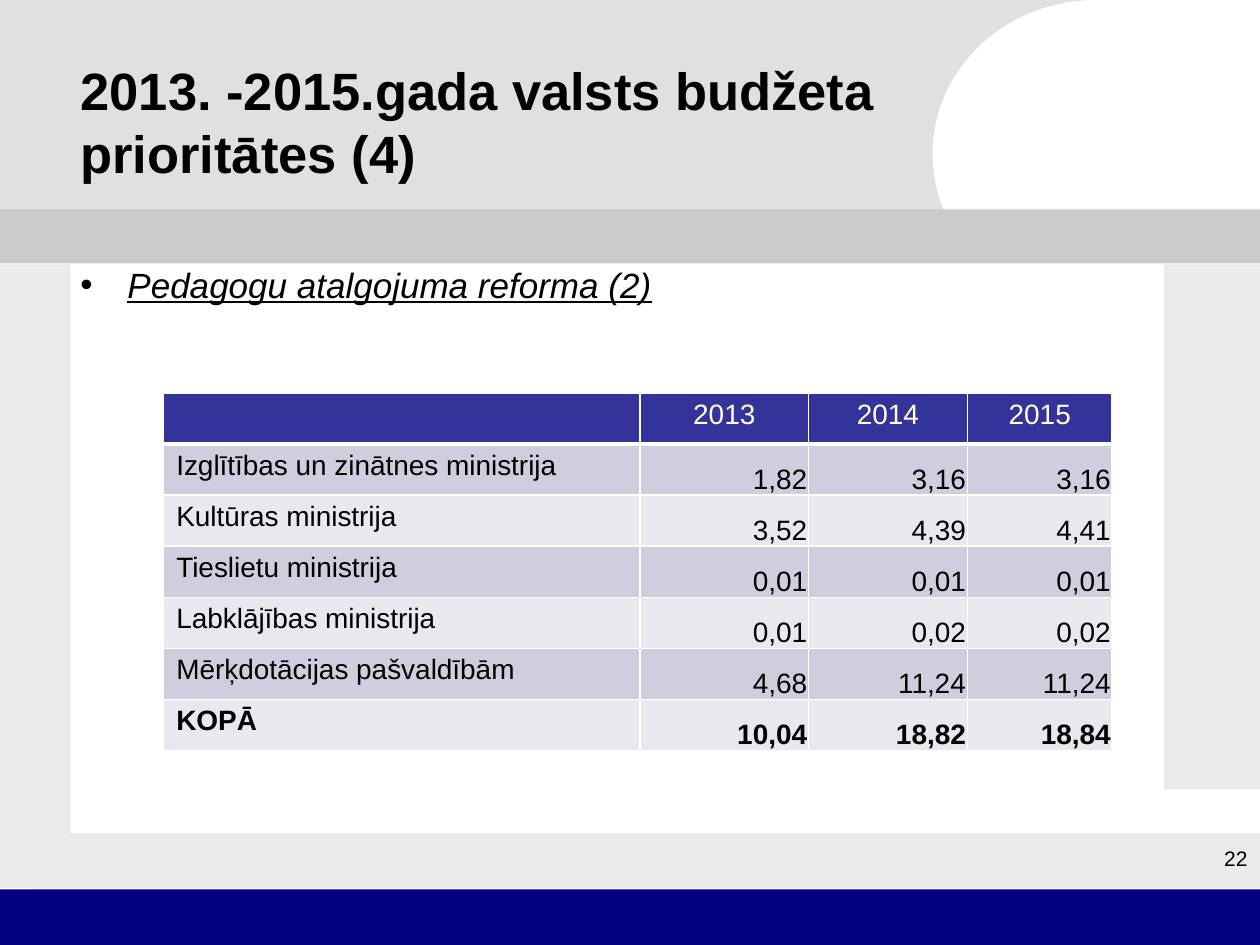
from lxml.etree import SubElement
from pptx import Presentation
from pptx.dml.color import RGBColor
from pptx.enum.shapes import MSO_SHAPE
from pptx.enum.text import MSO_ANCHOR, PP_ALIGN
from pptx.oxml.ns import qn
from pptx.util import Cm, Pt

TITLE = "2013. -2015.gada valsts budžeta prioritātes (4)"
TOPIC = "Pedagogu atalgojuma reforma (2)"
PAGE_NUMBER = "22"
FUNDING = [
    ("", "2013", "2014", "2015"),
    ("Izglītības un zinātnes ministrija", "1,82", "3,16", "3,16"),
    ("Kultūras ministrija", "3,52", "4,39", "4,41"),
    ("Tieslietu ministrija", "0,01", "0,01", "0,01"),
    ("Labklājības ministrija", "0,01", "0,02", "0,02"),
    ("Mērķdotācijas pašvaldībām", "4,68", "11,24", "11,24"),
    ("KOPĀ", "10,04", "18,82", "18,84"),
]
COLUMN_WIDTHS = [9.6, 3.4, 3.2, 2.92]
ROW_HEIGHT = 1.03
BACKDROP = [
    (MSO_SHAPE.RECTANGLE, "E0E0E0", (0, 0, 23.09, 4.29)),
    (MSO_SHAPE.OVAL, "FFFFFF", (18.8, 0, 6.6, 6.2)),
    (MSO_SHAPE.RECTANGLE, "EAEAEA", (0, 5.33, 1.42, 12.57)),
    (MSO_SHAPE.RECTANGLE, "EAEAEA", (0.66, 16.79, 24.74, 1.12)),
    (MSO_SHAPE.RECTANGLE, "000080", (0, 17.93, 25.4, 1.12)),
    (MSO_SHAPE.RECTANGLE, "EAEAEA", (23.47, 5.33, 1.93, 10.59)),
    (MSO_SHAPE.RECTANGLE, "FFFFFF", (21.89, 0, 3.51, 5.13)),
    (MSO_SHAPE.RECTANGLE, "CBCBCB", (0, 4.22, 25.4, 1.09)),
]


def paint(target, color):
    """Fill a shape or cell with one solid colour."""
    target.fill.solid()
    target.fill.fore_color.rgb = RGBColor.from_string(color)


def place(shape, at):
    """Set left, top, width and height in centimetres."""
    for name, length in zip(("left", "top", "width", "height"), at):
        setattr(shape, name, Cm(length))


def write(frame, text, size, color="000000", align=PP_ALIGN.LEFT, **formats):
    """Write one formatted paragraph and return it."""
    para = frame.paragraphs[0]
    para.alignment = align
    span = para.add_run()
    span.text = text
    span.font.color.rgb = RGBColor.from_string(color)
    for name, value in {"name": "Arial", "size": Pt(size), **formats}.items():
        setattr(span.font, name, value)
    return para


def add_text(page, at, text, size, **formats):
    """Add a wrapping text box holding one paragraph."""
    box = page.shapes.add_textbox(*map(Cm, at))
    box.text_frame.word_wrap = True
    return write(box.text_frame, text, size, **formats)


def add_bullet(para, indent):
    """Give a paragraph a hanging round bullet."""
    properties = para._p.get_or_add_pPr()
    properties.set("marL", str(Cm(indent)))
    properties.set("indent", str(-Cm(indent)))
    SubElement(properties, qn("a:buFont"), typeface="Arial")
    SubElement(properties, qn("a:buChar"), char="•")


def add_borders(cell, **widths):
    """Draw white cell borders of the given widths in points."""
    properties = cell._tc.get_or_add_tcPr()
    for side in ("L", "R", "T", "B"):
        line = SubElement(properties, qn(f"a:ln{side}"), w=str(Pt(widths.get(side, 1))))
        fill = SubElement(line, qn("a:solidFill"))
        SubElement(fill, qn("a:srgbClr"), val="FFFFFF")


def add_backdrop(page):
    """Draw the plain panels behind the content."""
    for kind, color, at in BACKDROP:
        panel = page.shapes.add_shape(kind, *map(Cm, at))
        panel.shadow.inherit = False
        panel.line.fill.background()
        paint(panel, color)


def add_funding_table(page):
    """Add the table of funding by ministry and year."""
    size = len(FUNDING), len(COLUMN_WIDTHS)
    at = 3.3, 7.92, sum(COLUMN_WIDTHS), ROW_HEIGHT * len(FUNDING)
    table = page.shapes.add_table(*size, *map(Cm, at)).table
    for column, width in zip(table.columns, COLUMN_WIDTHS):
        column.width = Cm(width)
    for i, values in enumerate(FUNDING):
        table.rows[i].height = Cm(ROW_HEIGHT)
        for j, value in enumerate(values):
            cell = table.cell(i, j)
            color, align = "000000", PP_ALIGN.LEFT
            if i == 0:
                color, align = "FFFFFF", PP_ALIGN.CENTER
                add_borders(cell, B=3)
                paint(cell, "333399")
            else:
                add_borders(cell, T=3 if i == 1 else 1)
                paint(cell, "CECEDE" if i % 2 else "E8E8EF")
                if j:
                    align = PP_ALIGN.RIGHT
                    cell.vertical_anchor = MSO_ANCHOR.BOTTOM
                    cell.margin_left = cell.margin_right = cell.margin_top = Cm(0.03)
                    cell.margin_bottom = 0
            write(cell.text_frame, value, 16, color, align, bold=i == len(FUNDING) - 1)


def main():
    """Build the slide and save the deck."""
    deck = Presentation()
    deck.slide_width, deck.slide_height = Cm(25.4), Cm(19.05)
    page = deck.slides.add_slide(deck.slide_layouts[5])
    add_backdrop(page)

    title = page.shapes.title
    page.shapes.element.append(title.element)
    place(title, (1.37, 0.84, 18.8, 3.18))
    title.text_frame.vertical_anchor = MSO_ANCHOR.MIDDLE
    write(title.text_frame, TITLE, 30, bold=True)

    topic = add_text(page, (1.37, 5.28, 22.53, 12.62), TOPIC, 20, italic=True, underline=True)
    topic.line_spacing = 0.9
    add_bullet(topic, 0.95)

    add_text(page, (19.66, 16.92, 5.74, 1.27), PAGE_NUMBER, 12, align=PP_ALIGN.RIGHT)
    add_funding_table(page)
    deck.save("out.pptx")


if __name__ == "__main__":
    main()
